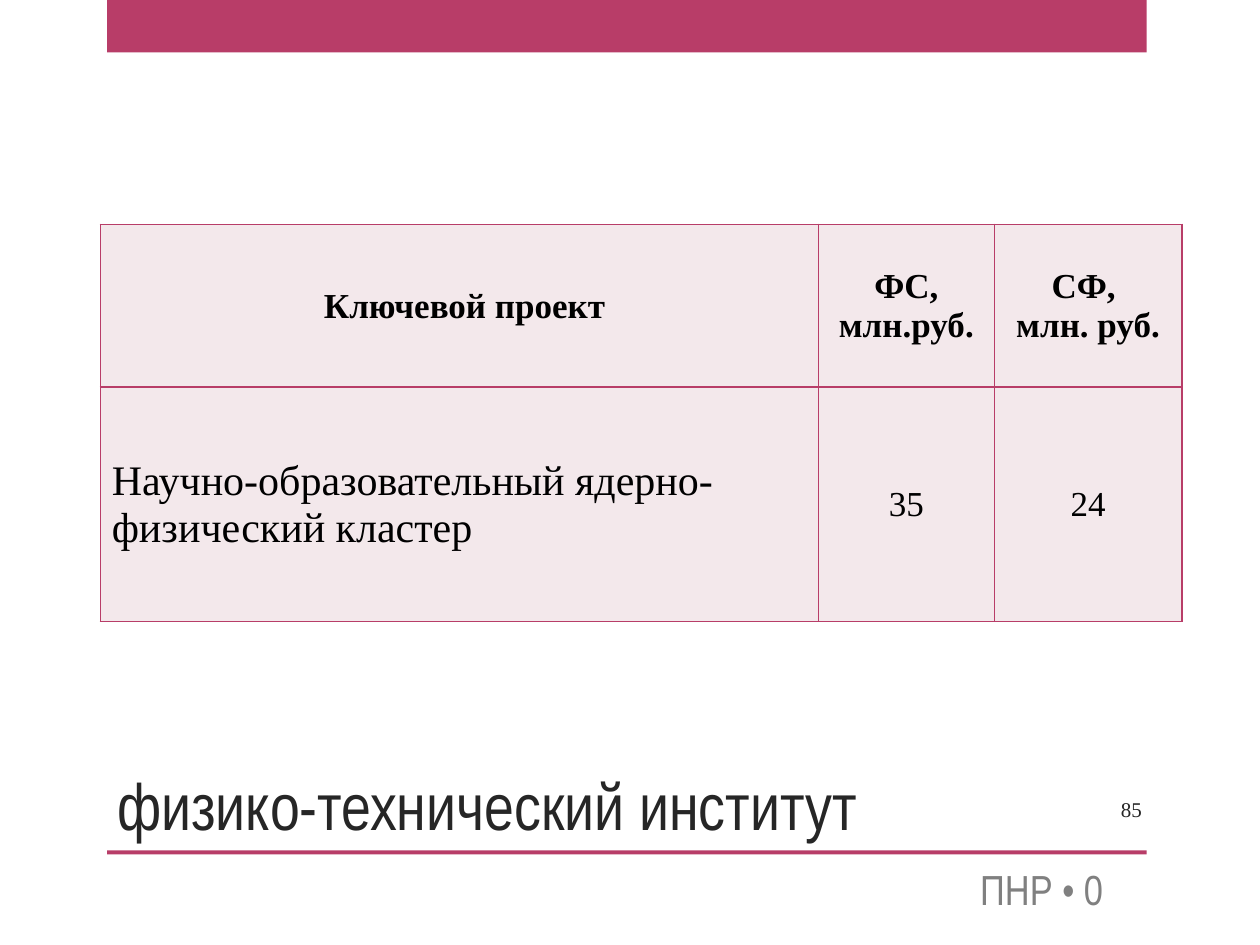
"""Build the key project funding slide of the physics and technology institute."""
from lxml import etree
from pptx import Presentation
from pptx.dml.color import RGBColor
from pptx.enum import shapes, text
from pptx.oxml import ns
from pptx.util import Pt

CRIMSON = RGBColor(0xB8, 0x3D, 0x68)
BLUSH = RGBColor(0xF3, 0xE8, 0xEB)
BLACK = RGBColor(0, 0, 0)
CHARCOAL = RGBColor(0x26, 0x26, 0x26)
GRAY = RGBColor(0x80, 0x80, 0x80)
SERIF, NARROW = "Times New Roman", "Arial Narrow"
LEFT, CENTER, RIGHT = text.PP_ALIGN.LEFT, text.PP_ALIGN.CENTER, text.PP_ALIGN.RIGHT
MIDDLE, BOTTOM = text.MSO_ANCHOR.MIDDLE, text.MSO_ANCHOR.BOTTOM


def write_paragraph(paragraph, words, font_name, size, color, align, bold=False):
    paragraph.alignment = align
    run = paragraph.add_run()
    run.text = words
    run.font.name = font_name
    run.font.size = Pt(size)
    run.font.bold = bold
    run.font.color.rgb = color


def add_borders(cell, color):
    properties = cell._tc.get_or_add_tcPr()
    for side in ("a:lnL", "a:lnR", "a:lnT", "a:lnB"):
        line = etree.SubElement(properties, ns.qn(side), w=str(Pt(1)))
        fill = etree.SubElement(line, ns.qn("a:solidFill"))
        etree.SubElement(fill, ns.qn("a:srgbClr"), val=str(color))


presentation = Presentation()
presentation.slide_width, presentation.slide_height = Pt(720), Pt(540)
slide = presentation.slides.add_slide(presentation.slide_layouts[6])

for top, height in ((0, 30), (486, 2.2)):
    band = slide.shapes.add_shape(
        shapes.MSO_SHAPE.RECTANGLE, Pt(61.2), Pt(top), Pt(594), Pt(height))
    band.shadow.inherit = False
    band.fill.solid()
    band.fill.fore_color.rgb = CRIMSON
    band.line.fill.background()

labels = (
    ("85", 600, 448, 59.5, 29, SERIF, 12, CHARCOAL, RIGHT, MIDDLE, 1),
    ("физико-технический институт", 60, 423.5, 521, 62.5, NARROW, 37.4, CHARCOAL, LEFT, BOTTOM, 0.9),
    ("ПНР • 0", 553, 490.5, 102, 35, NARROW, 24, GRAY, LEFT, MIDDLE, 1),
)
for words, left, top, width, height, font_name, size, color, align, anchor, spacing in labels:
    frame = slide.shapes.add_textbox(Pt(left), Pt(top), Pt(width), Pt(height)).text_frame
    frame.word_wrap = True
    frame.vertical_anchor = anchor
    frame.paragraphs[0].line_spacing = spacing
    write_paragraph(frame.paragraphs[0], words, font_name, size, color, align)

project_rows = (
    (("Ключевой проект",), ("ФС, млн.руб.",), ("СФ, ", "млн. руб.")),
    (("Научно-образовательный ядерно-физический кластер",), ("35",), ("24",)),
)
table = slide.shapes.add_table(2, 3, Pt(57.4), Pt(128.2), Pt(618), Pt(227)).table
for column, width in zip(table.columns, (410.3, 100.5, 107.2)):
    column.width = Pt(width)
for row, height in zip(table.rows, (93, 134)):
    row.height = Pt(height)

for row_index, row in enumerate(project_rows):
    for column_index, lines in enumerate(row):
        cell = table.cell(row_index, column_index)
        is_header = row_index == 0
        is_project = row_index == 1 and column_index == 0
        cell.vertical_anchor = MIDDLE
        cell.margin_left = Pt(6.5 if column_index == 0 else 0.7)
        cell.margin_right = cell.margin_top = Pt(0.7)
        cell.margin_bottom = Pt(0)
        add_borders(cell, CRIMSON)
        cell.fill.solid()
        cell.fill.fore_color.rgb = BLUSH
        for line_index, words in enumerate(lines):
            frame = cell.text_frame
            paragraph = frame.add_paragraph() if line_index else frame.paragraphs[0]
            write_paragraph(paragraph, words, SERIF, 24 if is_project else 20, BLACK,
                            LEFT if is_project else CENTER, is_header)

presentation.save("out.pptx")
